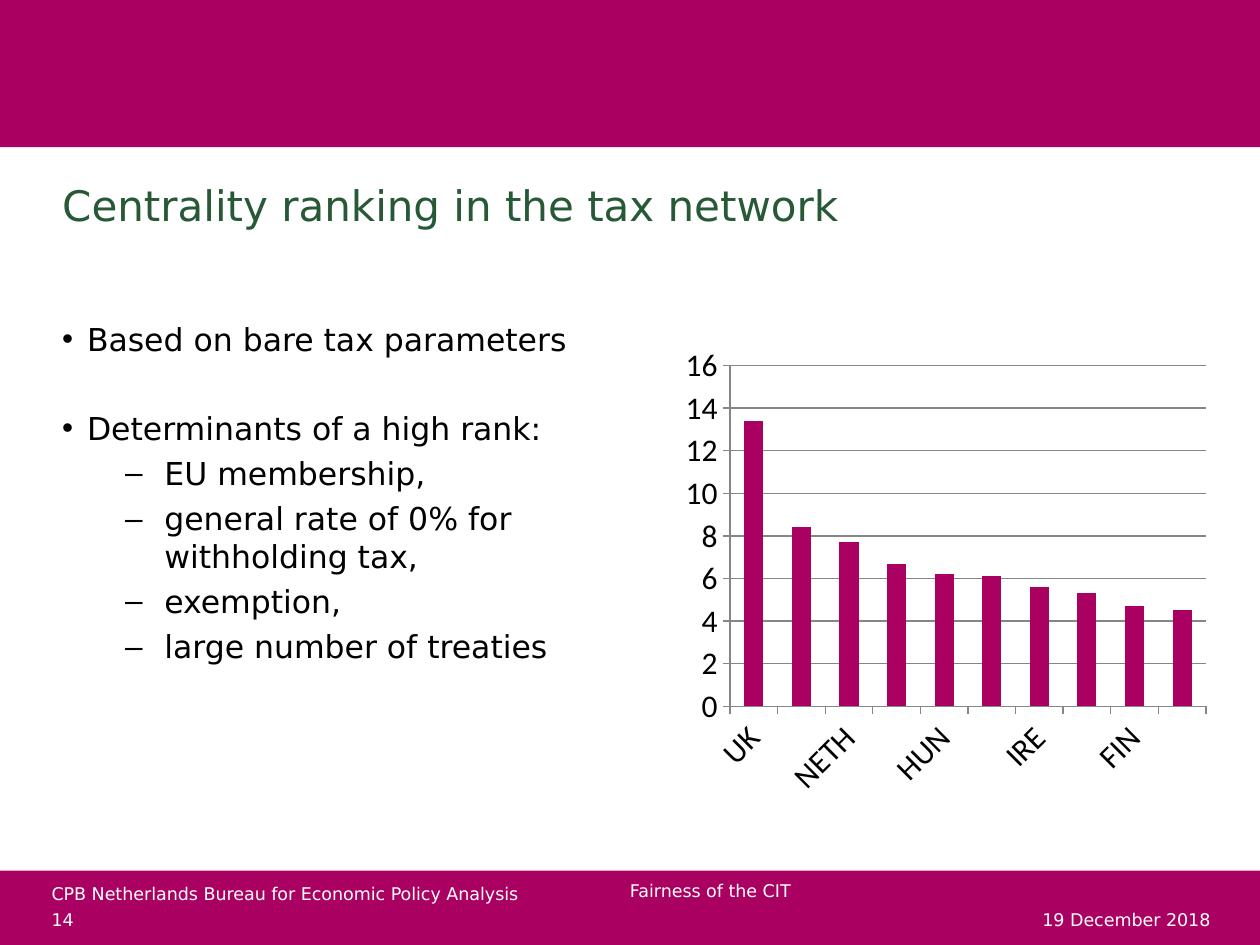
from lxml import etree
from pptx import Presentation
from pptx.chart.data import CategoryChartData
from pptx.dml.color import RGBColor
from pptx.enum import chart as ch, shapes, text
from pptx.oxml.ns import qn
from pptx.util import Cm, Pt

MAGENTA = RGBColor(0xA9, 0x00, 0x61)
GREEN = RGBColor(0x27, 0x59, 0x37)
GREY = RGBColor(0x86, 0x86, 0x86)
BLACK = RGBColor(0, 0, 0)
WHITE = RGBColor(255, 255, 255)
FONT = "DejaVu Sans"
LINE_GAP = 4.2
PARAGRAPH_GAP = 29.3

BULLETS = [
    (0, "Based on bare tax parameters", 0),
    (0, "Determinants of a high rank:", PARAGRAPH_GAP),
    (1, "EU membership,", LINE_GAP),
    (1, "general rate of 0% for withholding tax,", LINE_GAP),
    (1, "exemption,", LINE_GAP),
    (1, "large number of treaties", LINE_GAP),
]
# Bullet sign, text indent and hanging indent for each level
LEVELS = [("•", Cm(0.5), Cm(-0.5)), ("–", Cm(2.06), Cm(-0.79))]

RANKING = {"UK": 13.4, "LUX": 8.4, "NETH": 7.7, "EST": 6.7, "HUN": 6.2,
           "SGP": 6.1, "IRE": 5.6, "SLK": 5.3, "FIN": 4.7, "CYP": 4.5}


def style(font, size, color, name=FONT):
    font.size, font.name = Pt(size), name
    font.color.rgb = color


def place(sp, left, top, width, height):
    sp.left, sp.top, sp.width, sp.height = left, top, width, height


def add_band(s, left, top, width, height):
    sp = s.shapes.add_shape(shapes.MSO_SHAPE.RECTANGLE, left, top, width, height)
    sp.shadow.inherit = False
    sp.fill.solid()
    sp.fill.fore_color.rgb = MAGENTA
    sp.line.fill.background()


def add_label(s, left, top, width, height, words,
              anchor=text.MSO_ANCHOR.TOP, align=text.PP_ALIGN.LEFT):
    tf = s.shapes.add_textbox(left, top, width, height).text_frame
    tf.margin_left = tf.margin_right = tf.margin_top = tf.margin_bottom = 0
    tf.word_wrap = True
    tf.vertical_anchor = anchor
    tf.text = words
    p = tf.paragraphs[0]
    p.alignment = align
    style(p.runs[0].font, 10, WHITE)


def add_footer(s, left, top, width, height):
    add_band(s, left, top, width, height)
    middle = text.MSO_ANCHOR.MIDDLE
    margin = left + Cm(1.04)
    low = top + Cm(0.74)
    add_label(s, margin, top + Cm(0.25), Cm(10.26), Cm(0.43),
              "CPB Netherlands Bureau for Economic Policy Analysis")
    add_label(s, margin, low, Cm(1.9), Cm(0.5), "14", middle)
    add_label(s, left + width // 2, top + Cm(0.2), Cm(7.9), Cm(1),
              "Fairness of the CIT")
    add_label(s, left + width - Cm(4.5), low, Cm(3.5), Cm(0.5),
              "19 December 2018", middle, text.PP_ALIGN.RIGHT)


def fill_title(s, *box):
    sp = s.shapes.title
    place(sp, *box)
    tf = sp.text_frame
    tf.text = "Centrality ranking in the tax network"
    tf.auto_size = text.MSO_AUTO_SIZE.NONE
    tf.vertical_anchor = text.MSO_ANCHOR.TOP
    p = tf.paragraphs[0]
    p.alignment = text.PP_ALIGN.LEFT
    style(p.runs[0].font, 24, GREEN)


def fill_body(s, *box):
    sp = s.placeholders[1]
    place(sp, *box)
    tf = sp.text_frame
    tf.text = "\n".join(words for _, words, _ in BULLETS)
    tf.auto_size = text.MSO_AUTO_SIZE.NONE
    for p, (level, _, gap) in zip(tf.paragraphs, BULLETS):
        sign, margin, hang = LEVELS[level]
        p.level = level
        p.space_before = Pt(gap)
        pPr = p._p.get_or_add_pPr()
        pPr.set("marL", str(margin))
        pPr.set("indent", str(hang))
        etree.SubElement(pPr, qn("a:buChar")).set("char", sign)
        style(p.runs[0].font, 18, BLACK)


def set_plot_area(chart, x, y, w, h):
    """Fix the inner plot area, in fractions of the chart."""
    plot_area = chart._chartSpace.chart.plotArea
    for old in plot_area.findall(qn("c:layout")):
        plot_area.remove(old)
    layout = etree.Element(qn("c:layout"))
    manual = etree.SubElement(layout, qn("c:manualLayout"))
    for tag, val in (("layoutTarget", "inner"), ("xMode", "edge"), ("yMode", "edge"),
                     ("x", x), ("y", y), ("w", w), ("h", h)):
        etree.SubElement(manual, qn("c:" + tag)).set("val", str(val))
    plot_area.insert(0, layout)


def add_ranking_chart(s, *box):
    data = CategoryChartData()
    data.categories = list(RANKING)
    data.add_series("Series 1", list(RANKING.values()))
    chart = s.shapes.add_chart(ch.XL_CHART_TYPE.COLUMN_STACKED, *box, data).chart
    chart.has_legend = chart.has_title = False
    style(chart.font, 18, BLACK, "Calibri")
    set_plot_area(chart, 0.316, 0.067, 0.658, 0.724)

    # Columns
    plot = chart.plots[0]
    plot.gap_width, plot.overlap, plot.vary_by_categories = 150, 100, False
    fill = plot.series[0].format.fill
    fill.solid()
    fill.fore_color.rgb = MAGENTA

    # Axes and gridlines
    values = chart.value_axis
    values.minimum_scale, values.maximum_scale, values.major_unit = 0, 16, 2
    values.has_major_gridlines = True
    for axis in (values, chart.category_axis):
        axis.major_tick_mark = ch.XL_TICK_MARK.OUTSIDE
        axis.format.line.color.rgb = GREY
    values.major_gridlines.format.line.color.rgb = GREY


def main():
    prs = Presentation()
    prs.slide_width, prs.slide_height = Cm(25.4), Cm(19.05)
    s = prs.slides.add_slide(prs.slide_layouts[1])
    width, height = prs.slide_width, prs.slide_height
    left = Cm(1)
    footer = Cm(1.5)

    add_band(s, 0, 0, width, Cm(2.97))
    add_footer(s, 0, height - footer, width, footer)
    fill_title(s, left, Cm(3.5), Cm(23.4), Cm(1.6))
    fill_body(s, left, Cm(6.32), Cm(12.32), Cm(10.85))
    add_ranking_chart(s, Cm(10.11), Cm(6.73), Cm(14.58), Cm(9.5))
    prs.save("out.pptx")


if __name__ == "__main__":
    main()
